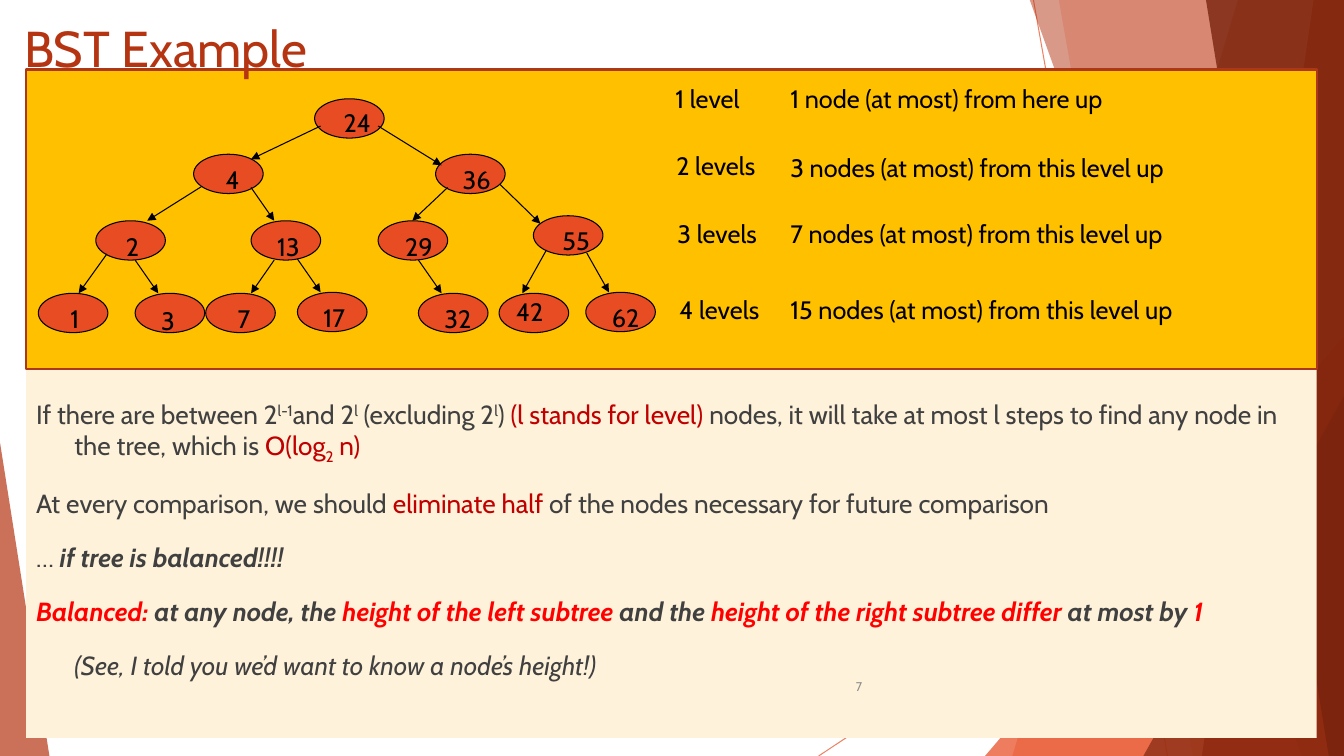
from pptx import Presentation
from pptx.dml.color import RGBColor
from pptx.enum.shapes import MSO_CONNECTOR, MSO_SHAPE
from pptx.enum.text import MSO_ANCHOR, PP_ALIGN
from pptx.oxml.ns import qn
from pptx.util import Inches, Pt
from lxml import etree

STRAIGHT = MSO_CONNECTOR.STRAIGHT
RECTANGLE = MSO_SHAPE.RECTANGLE
OVAL = MSO_SHAPE.OVAL
TRIANGLE = MSO_SHAPE.ISOSCELES_TRIANGLE
TOP, MIDDLE = MSO_ANCHOR.TOP, MSO_ANCHOR.MIDDLE
LEFT, RIGHT = PP_ALIGN.LEFT, PP_ALIGN.RIGHT

FONT = "Cabin"
COLORS = {
    "orange": "E84C22", "rust": "B53513", "brown": "78230D", "cream": "FFF2DA",
    "gold": "FFC000", "border": "AC3819", "black": "000000", "text": "404040",
    "dark red": "C00000", "red": "FF0000", "gray": "8C8C8C",
}
SUPER, SUB = 30, -25

BACKGROUND_LINES = [((10.25, 0), (11.58, 7.5)), ((13.33, 4.03), (8.12, 7.5))]
BACKGROUND_BANDS = [
    (12.28, 10.04, "orange", 36),
    (10.5, 11.83, "orange", 20),
    ((9.77, 3.33, 3.56, 4.17), 1, "orange", 72),
    (10.21, 12.91, "rust", 50),
    (13.03, 11.92, "rust", 70),
    (11.96, 13.18, "brown", 80),
    ((11.34, 3.93, 1.99, 3.57), 1, "brown", 66),
    ((0, 4.39, 0.49, 3.11), 0, "rust", 70),
]

NODES = [
    ("24", 3.12, 0.98, 0.19, 0.04),
    ("4", 1.92, 1.53, 0.22, 0.05), ("36", 4.32, 1.53, 0.17, 0.05),
    ("2", 0.95, 2.19, 0.2, 0.06), ("13", 2.49, 2.19, 0.16, 0.06),
    ("29", 3.75, 2.19, 0.17, 0.06), ("55", 5.29, 2.14, 0.19, 0.05),
    ("1", 0.38, 2.91, 0.22, 0.05), ("3", 1.34, 2.91, 0.16, 0.07),
    ("7", 2.04, 2.91, 0.22, 0.05), ("17", 2.95, 2.9, 0.16, 0.05),
    ("32", 4.15, 2.91, 0.16, 0.05), ("42", 4.95, 2.91, 0.07, -0.02),
    ("62", 5.81, 2.9, 0.16, 0.05),
]
EDGES = [
    ((3.18, 1.25), (2.49, 1.58)), ((3.75, 1.25), (4.38, 1.64)),
    ((2, 1.85), (1.46, 2.19)), ((2.49, 1.86), (2.72, 2.19)),
    ((4.44, 1.86), (4.09, 2.19)), ((4.96, 1.83), (5.36, 2.22)),
    ((1.06, 2.52), (0.78, 2.91)), ((1.34, 2.58), (1.57, 2.91)),
    ((2.72, 2.58), (2.49, 2.91)), ((2.95, 2.57), (3.18, 2.9)),
    ((4.15, 2.58), (4.38, 2.91)), ((5.42, 2.48), (5.18, 2.91)),
    ((5.82, 2.51), (6.04, 2.9)),
]
LEVELS = [
    ("1 level", 6.6, 0.78, "1 node (at most) from here up", 0.78),
    ("2 levels", 6.61, 1.44, "3 nodes (at most) from this level up", 1.46),
    ("3 levels", 6.62, 2.12, "7 nodes (at most) from this level up", 2.12),
    ("4 levels", 6.64, 2.87, "15 nodes (at most) from this level up", 2.87),
]
BODY = [
    [("If there are between 2",), ("l-1", "text", "", SUPER), ("and 2",),
     ("l", "text", "", SUPER), (" (excluding 2",), ("l", "text", "", SUPER), (")",),
     (" (l stands for level) ", "dark red"),
     ("nodes, it will take at most l steps to find any node in the tree, which is ",),
     ("O(log", "dark red"), ("2", "dark red", "", SUB), (" n)", "dark red")],
    [("At every comparison, we should ",), ("eliminate half", "dark red"),
     (" of the nodes necessary for future comparison",)],
    [("… ",), ("if tree is balanced!!!!", "text", "bi")],
    [("Balanced: ", "red", "bi"), ("at any node, the ", "text", "bi"),
     ("height of the left subtree ", "red", "bi"), ("and the ", "text", "bi"),
     ("height of the right subtree differ", "red", "bi"),
     (" at most by ", "text", "bi"), ("1", "red", "bi")],
    [("(See, I told you we’d want to know a node’s height!)", "text", "i")],
]


def color(name):
    return RGBColor.from_string(COLORS[name])


def set_opacity(shape, percent):
    for element in shape._element.spPr.iter(qn("a:srgbClr")):
        etree.SubElement(element, qn("a:alpha")).set("val", str(percent * 1000))


def style_shape(shape, fill, line=None, width=0.75):
    shape.shadow.inherit = False
    shape.fill.solid()
    shape.fill.fore_color.rgb = color(fill)
    if line:
        shape.line.color.rgb = color(line)
        shape.line.width = Pt(width)
    else:
        shape.line.fill.background()


def add_preset(slide, kind, box, fill, line=None, width=0.75):
    shape = slide.shapes.add_shape(kind, *map(Inches, box))
    style_shape(shape, fill, line, width)
    return shape


def add_line(slide, start, end, name, arrow=False):
    line = slide.shapes.add_connector(STRAIGHT, *map(Inches, start + end))
    line.line.color.rgb = color(name)
    line.line.width = Pt(0.75)
    if arrow:
        etree.SubElement(line.line._get_or_add_ln(), qn("a:tailEnd")).set("type", "triangle")
    etree.SubElement(line._element.spPr, qn("a:effectLst"))
    return line


def add_run(paragraph, text, size, name="text", style="", baseline=0):
    run = paragraph.add_run()
    run.text = text
    run.font.name = FONT
    run.font.size = Pt(size)
    run.font.color.rgb = color(name)
    run.font.bold = "b" in style
    run.font.italic = "i" in style
    if baseline:
        run.font._element.set("baseline", str(baseline * 1000))


def add_label(slide, box, text, size=18, name="black", wrap=True, anchor=TOP, align=LEFT):
    frame = slide.shapes.add_textbox(*map(Inches, box)).text_frame
    frame.word_wrap = wrap
    frame.vertical_anchor = anchor
    frame.paragraphs[0].alignment = align
    add_run(frame.paragraphs[0], text, size, name)


def add_band(slide, top_x, bottom_x, fill, opacity):
    builder = slide.shapes.build_freeform(Inches(top_x), Inches(-0.01))
    corners = [(13.33, -0.01), (13.33, 7.5), (bottom_x, 7.5)]
    builder.add_line_segments([(Inches(x), Inches(y)) for x, y in corners])
    shape = builder.convert_to_shape()
    style_shape(shape, fill)
    set_opacity(shape, opacity)


def add_background(slide):
    for start, end in BACKGROUND_LINES:
        set_opacity(add_line(slide, start, end, "orange"), 70)
    for place, second, fill, opacity in BACKGROUND_BANDS:
        if isinstance(place, tuple):
            triangle = add_preset(slide, TRIANGLE, place, fill)
            triangle.adjustments[0] = second
            set_opacity(triangle, opacity)
        else:
            add_band(slide, place, second, fill, opacity)


def add_body(slide):
    frame = add_preset(slide, RECTANGLE, (0.26, 1.02, 12.8, 6.3), "cream").text_frame
    frame.word_wrap = True
    frame.vertical_anchor = TOP
    frame.margin_top = Inches(2.93)
    for index, runs in enumerate(BODY):
        paragraph = frame.add_paragraph() if index else frame.paragraphs[0]
        paragraph.alignment = LEFT
        paragraph.space_before = Pt(16 if index else 0)
        properties = paragraph._p.get_or_add_pPr()
        properties.set("marL", str(Inches(0.38)))
        properties.set("indent", str(0 if runs is BODY[-1] else Inches(-0.38)))
        for text, *style in runs:
            add_run(paragraph, text, 18.7, *style)


def add_tree(slide):
    for value, left, top, label_x, label_y in NODES:
        add_preset(slide, OVAL, (left, top, 0.69, 0.39), "orange", "black")
        add_label(slide, (left + label_x, top + label_y, 0.53, 0.4), value)
    for start, end in EDGES:
        add_line(slide, start, end, "black", arrow=True)


def main():
    presentation = Presentation()
    presentation.slide_width = Inches(13.33)
    presentation.slide_height = Inches(7.5)
    slide = presentation.slides.add_slide(presentation.slide_layouts[6])
    add_background(slide)
    add_body(slide)
    add_preset(slide, RECTANGLE, (0.26, 0.69, 12.8, 2.97), "gold", "border", 1.5)
    add_label(slide, (7.65, 6.61, 1, 0.4), "7", 9, "gray", anchor=MIDDLE, align=RIGHT)
    add_label(slide, (0.14, 0.12, 9.4, 0.83), "BST Example", 36, "rust")
    add_tree(slide)
    for level, left, top, count, count_top in LEVELS:
        add_label(slide, (left, top, 1.06, 0.4), level, wrap=False)
        add_label(slide, (7.74, count_top, 4.3, 0.4), count, wrap=False)
    presentation.save("out.pptx")


if __name__ == "__main__":
    main()
